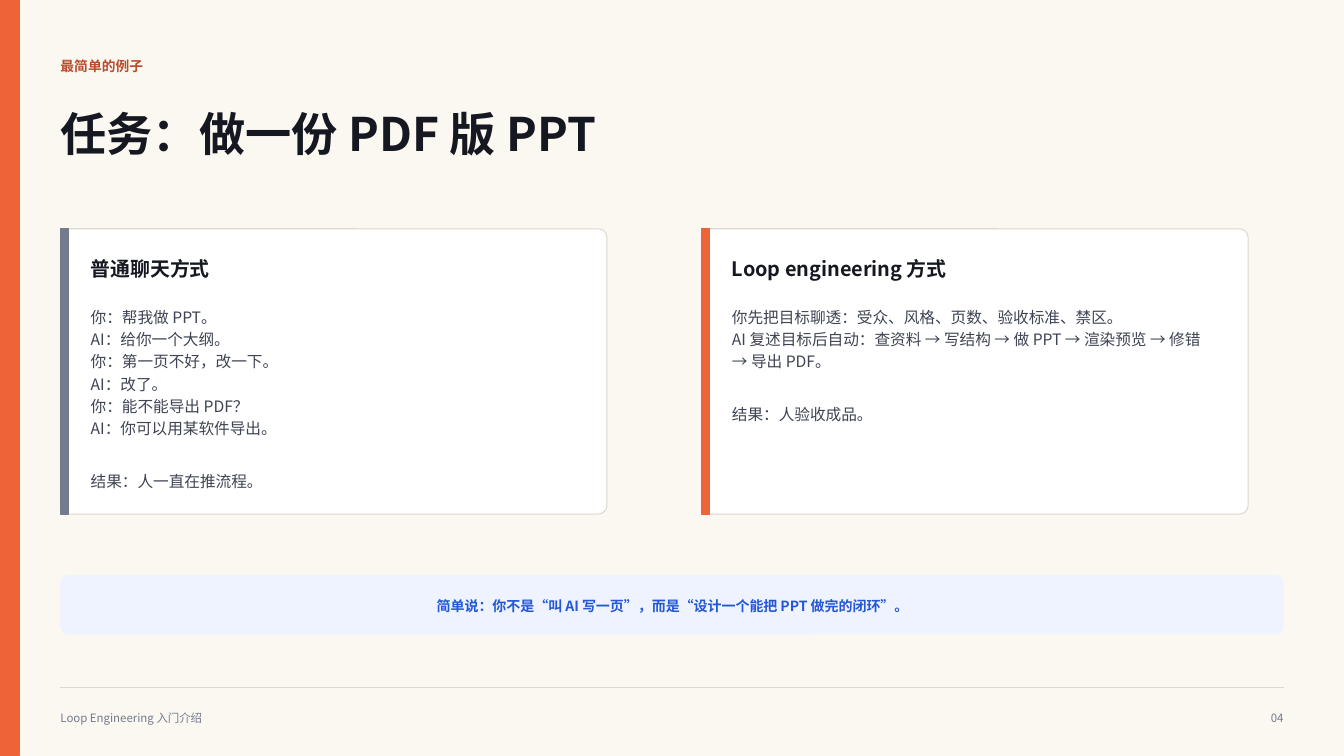
from lxml import etree
from pptx import Presentation
from pptx.dml.color import RGBColor
from pptx.enum.shapes import MSO_CONNECTOR as Connector, MSO_SHAPE as Shape
from pptx.enum.text import MSO_ANCHOR as Anchor, MSO_AUTO_SIZE as AutoSize, PP_ALIGN as Align
from pptx.oxml.ns import qn
from pptx.util import Inches, Pt

# Content
KICKER = "最简单的例子"
TITLE = "任务：做一份 PDF 版 PPT"
CARDS = [
    {"heading": "普通聊天方式", "accent": "737B8C",
     "lines": ["你：帮我做 PPT。", "AI：给你一个大纲。", "你：第一页不好，改一下。",
               "AI：改了。", "你：能不能导出 PDF？", "AI：你可以用某软件导出。"],
     "result": "结果：人一直在推流程。"},
    {"heading": "Loop engineering 方式", "accent": "EF6338",
     "lines": ["你先把目标聊透：受众、风格、页数、验收标准、禁区。",
               "AI 复述目标后自动：查资料 → 写结构 → 做 PPT → 渲染预览 → 修错 → 导出 PDF。"],
     "result": "结果：人验收成品。"},
]
SUMMARY = "简单说：你不是“叫 AI 写一页”，而是“设计一个能把 PPT 做完的闭环”。"
FOOTER, PAGE_NUMBER = "Loop Engineering 入门介绍", "04"

# Formats
FONT = "Noto Sans CJK SC"
ORANGE, RULE, INK, GREY = "EF6338", "DED7CD", "151821", "737B8C"
STYLES = {
    "kicker": {"size": 9.8, "color": "B94B2C", "bold": True, "spacing": 1.08},
    "title": {"size": 33, "color": INK, "bold": True, "spacing": 0.96},
    "heading": {"size": 14.2, "color": INK, "bold": True, "spacing": 1.12},
    "body": {"size": 11.2, "color": "3E4453", "bold": False, "spacing": 1.18},
    "summary": {"size": 10, "color": "2457D6", "bold": True, "spacing": 1.12},
    "footer": {"size": 8.2, "color": GREY, "bold": False, "spacing": 1.08},
}
LEFT, RIGHT = 0.6, 12.73
CARD_TOP, CARD_WIDTH, CARD_HEIGHT, CARD_STEP = 2.27, 5.42, 2.83, 6.36
RESULT_GAP = 22


def rgb(value):
    return RGBColor.from_string(value)


def place(box, left, top, width, height):
    places = {"left": left, "top": top, "width": width, "height": height}
    for name, value in places.items():
        setattr(box, name, Inches(value))


def add_block(kind, area, fill, line, corner=None):
    block = page.shapes.add_shape(kind, *map(Inches, area))
    block.shadow.inherit = False
    block.fill.solid()
    block.fill.fore_color.rgb = rgb(fill)
    block.line.color.rgb = rgb(line)
    block.line.width = Pt(0.75)
    if corner is not None:
        block.adjustments[0] = corner


def write(box, area, lines, style, align=Align.LEFT, last_gap=0):
    place(box, *area)
    frame = box.text_frame
    settings = {"word_wrap": True, "auto_size": AutoSize.NONE, "vertical_anchor": Anchor.TOP,
                "margin_left": 0, "margin_top": 0, "margin_right": 0, "margin_bottom": 0}
    for name, value in settings.items():
        setattr(frame, name, value)
    look = STYLES[style]
    for index, line in enumerate(lines):
        para = frame.paragraphs[0] if index == 0 else frame.add_paragraph()
        gap = last_gap if 0 < index == len(lines) - 1 else 0
        layout = {"alignment": align, "line_spacing": look["spacing"],
                  "space_before": Pt(gap), "space_after": Pt(0)}
        for name, value in layout.items():
            setattr(para, name, value)
        if box.is_placeholder:
            props = para._p.get_or_add_pPr()
            props.set("marL", "0")
            props.set("indent", "0")
            etree.SubElement(props, qn("a:buNone"))
        span = para.add_run()
        span.text = line
        letters = {"name": FONT, "size": Pt(look["size"]), "bold": look["bold"]}
        for name, value in letters.items():
            setattr(span.font, name, value)
        span.font.color.rgb = rgb(look["color"])
        etree.SubElement(span._r.get_or_add_rPr(), qn("a:ea"), typeface=FONT)


def add_text(area, text, style, align=Align.LEFT):
    box = page.shapes.add_textbox(*map(Inches, area))
    write(box, area, [text], style, align)


def bring_forward(box):
    box.element.getparent().append(box.element)
    return box


# Page, on the comparison layout
deck = Presentation()
deck.slide_width, deck.slide_height = Inches(13.33), Inches(7.5)
page = deck.slides.add_slide(deck.slide_layouts[4])
page.background.fill.solid()
page.background.fill.fore_color.rgb = rgb("FBF8F2")
title, *card_boxes = page.placeholders

# Side band and footer
add_block(Shape.RECTANGLE, (0, 0, 0.19, 7.5), ORANGE, ORANGE)
rule = page.shapes.add_connector(Connector.STRAIGHT, Inches(LEFT), Inches(6.82),
                                 Inches(RIGHT), Inches(6.82))
rule.line.color.rgb = rgb(RULE)
rule.line.width = Pt(0.75)
etree.SubElement(rule.element.spPr, qn("a:effectLst"))
add_text((LEFT, 7.04, CARD_WIDTH, 0.25), FOOTER, "footer")
add_text((RIGHT - 0.5, 7.04, 0.5, 0.25), PAGE_NUMBER, "footer", Align.RIGHT)

# Heading
add_text((LEFT, 0.56, 8.96, 0.25), KICKER, "kicker")
write(bring_forward(title), (LEFT, 1.08, 7.71, 0.6), [TITLE], "title")

# Two cards
for index, card in enumerate(CARDS):
    left = LEFT + index * CARD_STEP
    heading, body = card_boxes[2 * index:2 * index + 2]
    add_block(Shape.ROUNDED_RECTANGLE, (left, CARD_TOP, CARD_WIDTH, CARD_HEIGHT),
              "FFFFFF", RULE, 0.03)
    add_block(Shape.RECTANGLE, (left, CARD_TOP, 0.08, CARD_HEIGHT), card["accent"], card["accent"])
    write(bring_forward(heading), (left + 0.3, CARD_TOP + 0.25, 4.92, 0.29),
          [card["heading"]], "heading")
    write(bring_forward(body), (left + 0.3, CARD_TOP + 0.75, 4.83, 1.96),
          card["lines"] + [card["result"]], "body", last_gap=RESULT_GAP)

# Summary band
add_block(Shape.ROUNDED_RECTANGLE, (LEFT, 5.71, RIGHT - LEFT, 0.58), "EEF3FF", "EEF3FF", 0.14)
add_text((0.92, 5.91, 11.5, 0.19), SUMMARY, "summary", Align.CENTER)

deck.save("out.pptx")
